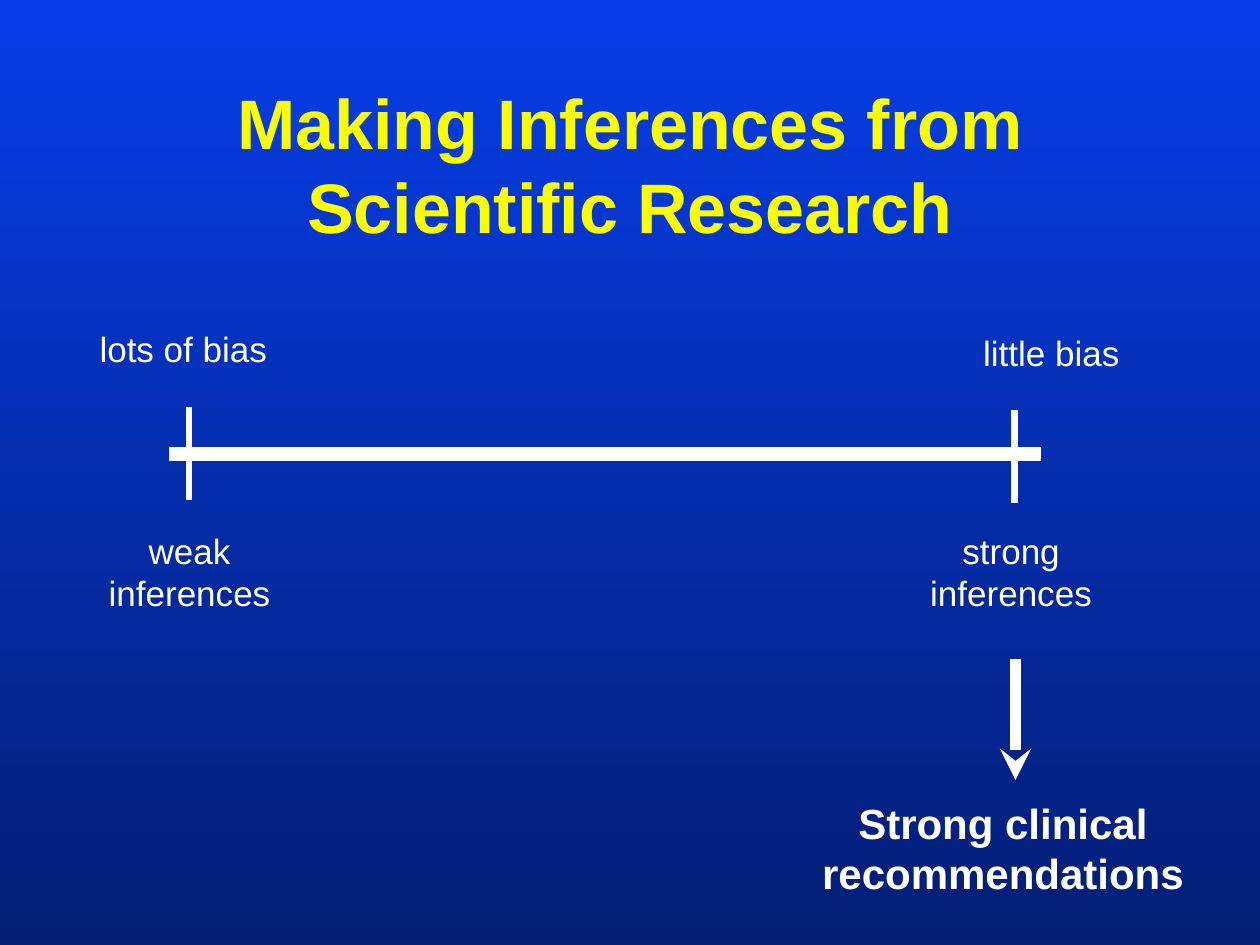
from dataclasses import dataclass

from lxml.etree import SubElement
from pptx import Presentation
from pptx.dml.color import RGBColor
from pptx.enum.shapes import MSO_CONNECTOR as Connector
from pptx.enum.text import MSO_ANCHOR as Anchor, MSO_AUTO_SIZE as AutoSize, PP_ALIGN as Align
from pptx.oxml.ns import qn
from pptx.slide import Slide
from pptx.text.text import TextFrame
from pptx.util import Inches, Pt


@dataclass(frozen=True)
class Theme:
    font: str = "Arial"
    sky: RGBColor = RGBColor(0x06, 0x3D, 0xE8)
    navy: RGBColor = RGBColor(0x03, 0x1E, 0x74)
    yellow: RGBColor = RGBColor(0xFA, 0xFD, 0x00)
    white: RGBColor = RGBColor(0xFF, 0xFF, 0xFF)
    title_size: int = 40
    label_size: int = 20
    conclusion_size: int = 24


THEME = Theme()


@dataclass(frozen=True)
class Label:
    text: str
    left: float
    top: float
    width: float
    height: float
    size: int = THEME.label_size
    bold: bool = False


@dataclass(frozen=True)
class Stroke:
    start: tuple[float, float]
    end: tuple[float, float]
    weight: float
    arrow: bool = False


AXIS_Y = 3.6
TICK_HEIGHT = 0.74
TICKS = ((1.5, 3.23), (8.05, 3.25))

STROKES = (
    Stroke((1.34, AXIS_Y), (8.26, AXIS_Y), 8),
    *(Stroke((x, top), (x, top + TICK_HEIGHT), 4) for x, top in TICKS),
    Stroke((8.06, 5.23), (8.06, 6.19), 6, arrow=True),
)

LABELS = (
    Label("lots of bias", 0.58, 2.56, 1.75, 0.43),
    Label("little bias", 7.51, 2.59, 1.67, 0.43),
    Label("weak inferences", 0.67, 4.16, 1.67, 0.76),
    Label("strong inferences", 7.19, 4.16, 1.67, 0.76),
    Label("Strong clinical recommendations", 6.2, 6.29, 3.52, 0.9,
          THEME.conclusion_size, bold=True),
)


def write_text(frame: TextFrame, text: str, margins: tuple[float, float],
               frame_format: dict, font_format: dict) -> None:
    """Fill a frame with one centred paragraph."""
    side, edge = (Inches(margin) for margin in margins)
    frame_format = {"word_wrap": True, "margin_left": side, "margin_right": side,
                    "margin_top": edge, "margin_bottom": edge, **frame_format}
    for name, value in frame_format.items():
        setattr(frame, name, value)
    paragraph = frame.paragraphs[0]
    paragraph.text = text
    paragraph.alignment = Align.CENTER
    color = font_format.pop("color")
    for run in paragraph.runs:
        for name, value in {"name": THEME.font, **font_format}.items():
            setattr(run.font, name, value)
        run.font.color.rgb = color


def paint_background(slide: Slide) -> None:
    fill = slide.background.fill
    fill.gradient()
    fill.gradient_angle = 270
    for stop, color in zip(fill.gradient_stops, (THEME.sky, THEME.navy)):
        stop.color.rgb = color


def add_title(slide: Slide, text: str) -> None:
    title = slide.shapes.title
    place = {"left": 0.75, "top": 0.67, "width": 8.5, "height": 1.25}
    for name, value in place.items():
        setattr(title, name, Inches(value))
    write_text(title.text_frame, text, (0.1, 0.05),
               {"vertical_anchor": Anchor.MIDDLE, "auto_size": AutoSize.NONE},
               {"size": Pt(THEME.title_size), "bold": True, "color": THEME.yellow})


def add_stroke(slide: Slide, stroke: Stroke) -> None:
    ends = (Inches(value) for value in (*stroke.start, *stroke.end))
    connector = slide.shapes.add_connector(Connector.STRAIGHT, *ends)
    connector.line.color.rgb = THEME.white
    connector.line.width = Pt(stroke.weight)
    properties = connector.element.spPr
    if stroke.arrow:
        SubElement(properties.find(qn("a:ln")), qn("a:tailEnd"), type="stealth")
    SubElement(properties, qn("a:effectLst"))


def add_label(slide: Slide, label: Label) -> None:
    place = (label.left, label.top, label.width, label.height)
    box = slide.shapes.add_textbox(*(Inches(value) for value in place))
    write_text(box.text_frame, label.text, (0.09, 0.04),
               {"vertical_anchor": Anchor.TOP, "auto_size": AutoSize.SHAPE_TO_FIT_TEXT},
               {"size": Pt(label.size), "bold": label.bold, "color": THEME.white})
    # Space before as a share of the line height
    properties = box.text_frame.paragraphs[0]._p.get_or_add_pPr()
    SubElement(SubElement(properties, qn("a:spcBef")), qn("a:spcPct"), val="50000")


def main() -> None:
    deck = Presentation()
    deck.slide_width, deck.slide_height = Inches(10), Inches(7.5)
    slide = deck.slides.add_slide(deck.slide_layouts.get_by_name("Title Only"))

    # Background and heading
    paint_background(slide)
    add_title(slide, "Making Inferences from\vScientific Research")

    # Bias scale with its ticks, and the arrow to the conclusion
    for stroke in STROKES:
        add_stroke(slide, stroke)

    # Wording around the scale
    for label in LABELS:
        add_label(slide, label)

    deck.save("out.pptx")


if __name__ == "__main__":
    main()
